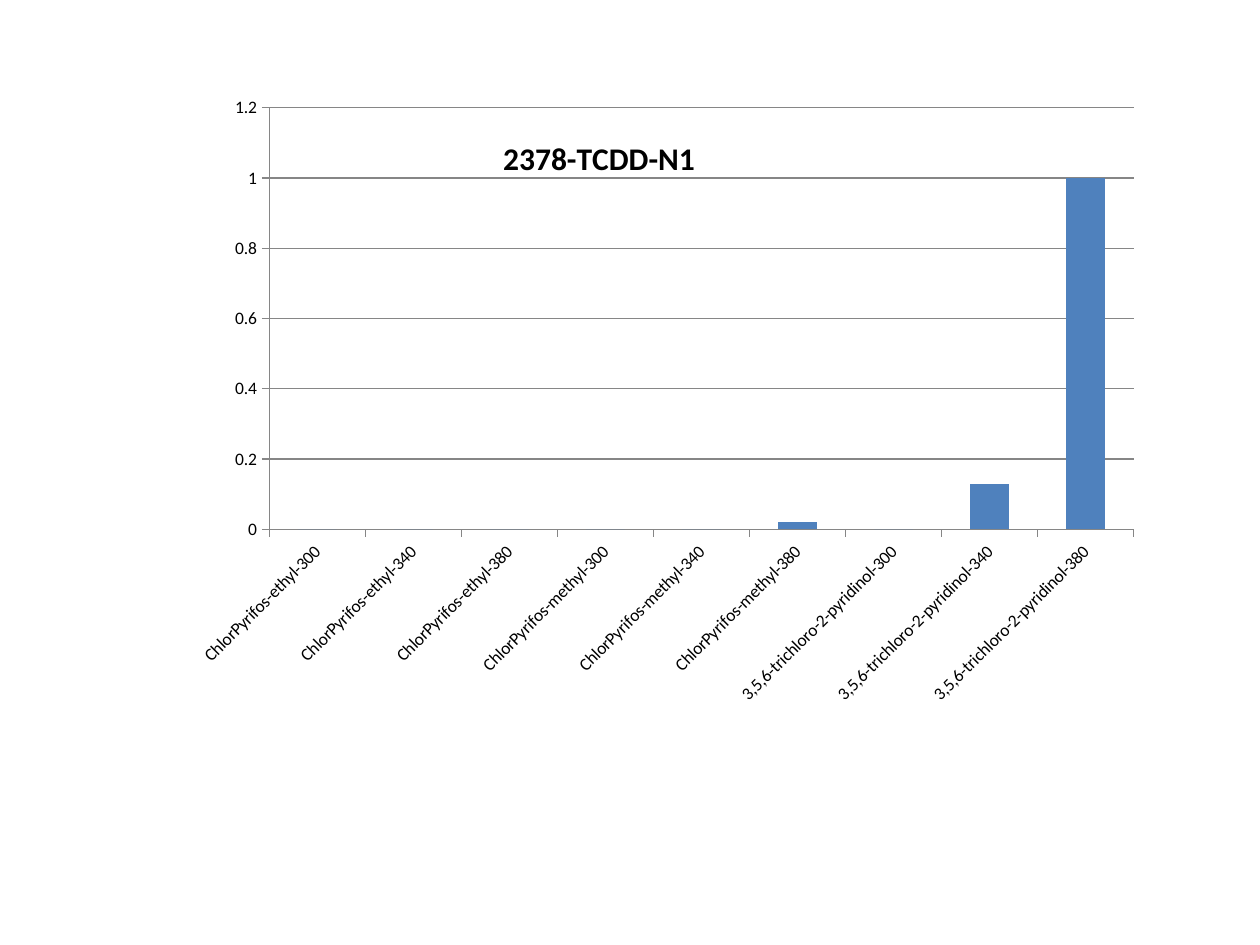
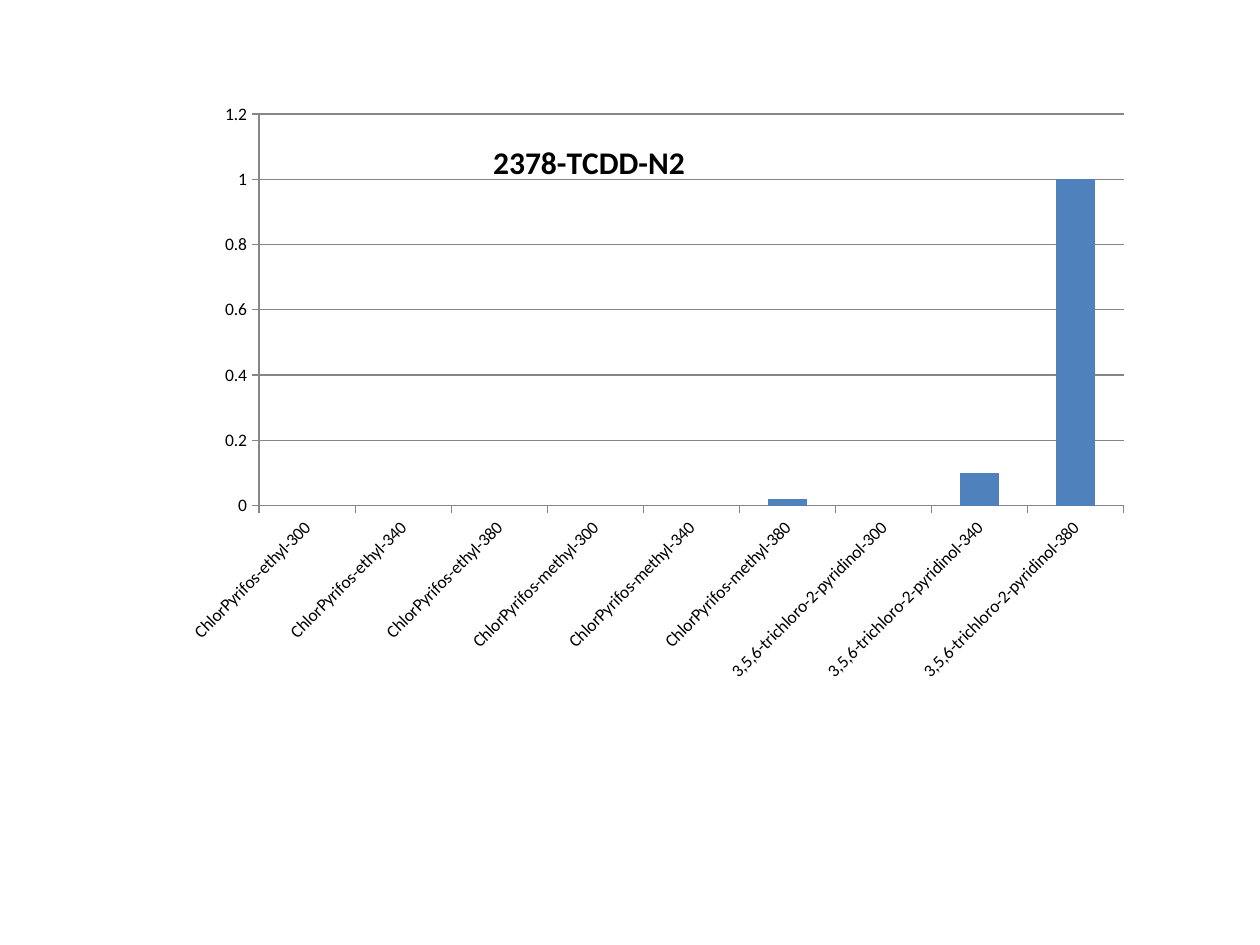
from lxml import etree
from pptx import Presentation
from pptx.chart.data import CategoryChartData
from pptx.dml.color import RGBColor
from pptx.enum.chart import XL_CHART_TYPE, XL_TICK_LABEL_POSITION, XL_TICK_MARK
from pptx.oxml.ns import qn
from pptx.util import Inches, Pt

COLUMNS = XL_CHART_TYPE.COLUMN_CLUSTERED
LABELS_LOW = XL_TICK_LABEL_POSITION.LOW
TICK_OUTSIDE = XL_TICK_MARK.OUTSIDE
TICK_NONE = XL_TICK_MARK.NONE

BAR_BLUE, AXIS_GRAY, TEXT_BLACK = "4F81BD", "868686", "000000"
FONT = "Calibri"
COMPOUNDS = ["ChlorPyrifos-ethyl", "ChlorPyrifos-methyl", "3,5,6-trichloro-2-pyridinol"]
WAVELENGTHS = [300, 340, 380]

# sample name, chart frame (left, top, width, height), response per compound and wavelength
SAMPLES = [
    ("2378-TCDD-N1", (0.83, 0.44, 8.43, 6.61), [0, 0, 0, 0, 0, 0.02, 0, 0.13, 1]),
    ("2378-TCDD-N2", (0.75, 0.52, 8.43, 6.14), [0, 0, 0, 0, 0, 0.02, 0, 0.1, 1]),
]


def color(hex_string):
    return RGBColor.from_string(hex_string)


def place(element, index, **settings):
    """Give a chart part a manual layout, as its child number index."""
    for old_layout in element.findall(qn("c:layout")):
        element.remove(old_layout)
    layout = etree.Element(qn("c:layout"))
    manual = etree.SubElement(layout, qn("c:manualLayout"))
    for tag, value in settings.items():
        etree.SubElement(manual, qn("c:" + tag)).set("val", str(value))
    element.insert(index, layout)


prs = Presentation()
prs.slide_width, prs.slide_height = Inches(10), Inches(7.5)
blank_layout = prs.slide_layouts[6]

for sample, frame, responses in SAMPLES:
    slide = prs.slides.add_slide(blank_layout)
    data = CategoryChartData(number_format="General")
    data.categories = [f"{compound}-{nm}" for compound in COMPOUNDS for nm in WAVELENGTHS]
    data.add_series(sample, responses)
    chart = slide.shapes.add_chart(COLUMNS, *map(Inches, frame), data).chart
    chart.has_legend = False
    chart.font.name = FONT
    chart.font.size = Pt(10)
    chart.font.color.rgb = color(TEXT_BLACK)

    chart.has_title = True
    title_run = chart.chart_title.text_frame.paragraphs[0].add_run()
    title_run.text = sample
    title_run.font.name = FONT
    title_run.font.size = Pt(18)
    title_run.font.bold = True
    title_run.font.color.rgb = color(TEXT_BLACK)
    chart.chart_title.include_in_layout = False
    place(chart.chart_title._element, 1, xMode="edge", yMode="edge", x=0.37, y=0.09)

    plot = chart.plots[0]
    plot.gap_width = 150
    plot.vary_by_categories = False
    bars = plot.series[0].format.fill
    bars.solid()
    bars.fore_color.rgb = color(BAR_BLUE)
    place(chart._chartSpace.chart.plotArea, 0, layoutTarget="inner", xMode="edge",
          yMode="edge", x=0.155, y=0.063, w=0.814, h=0.506)

    response_axis, compound_axis = chart.value_axis, chart.category_axis
    for axis in (response_axis, compound_axis):
        axis.major_tick_mark = TICK_OUTSIDE
        axis.minor_tick_mark = TICK_NONE
        axis.format.line.color.rgb = color(AXIS_GRAY)
        axis.format.line.width = Pt(0.75)
        axis.tick_labels.font.size = Pt(10)
    response_axis.minimum_scale, response_axis.maximum_scale = 0, 1.2
    response_axis.major_unit = 0.2
    response_axis.tick_labels.number_format = "General"
    response_axis.tick_labels.number_format_is_linked = False
    response_axis.has_major_gridlines = True
    gridline = response_axis.major_gridlines.format.line
    gridline.color.rgb = color(AXIS_GRAY)
    gridline.width = Pt(0.75)
    compound_axis.tick_label_position = LABELS_LOW
    label_body = compound_axis._element.find(qn("c:txPr")).find(qn("a:bodyPr"))
    label_body.set("rot", str(-45 * 60000))
    label_body.set("vert", "horz")

prs.save("out.pptx")
